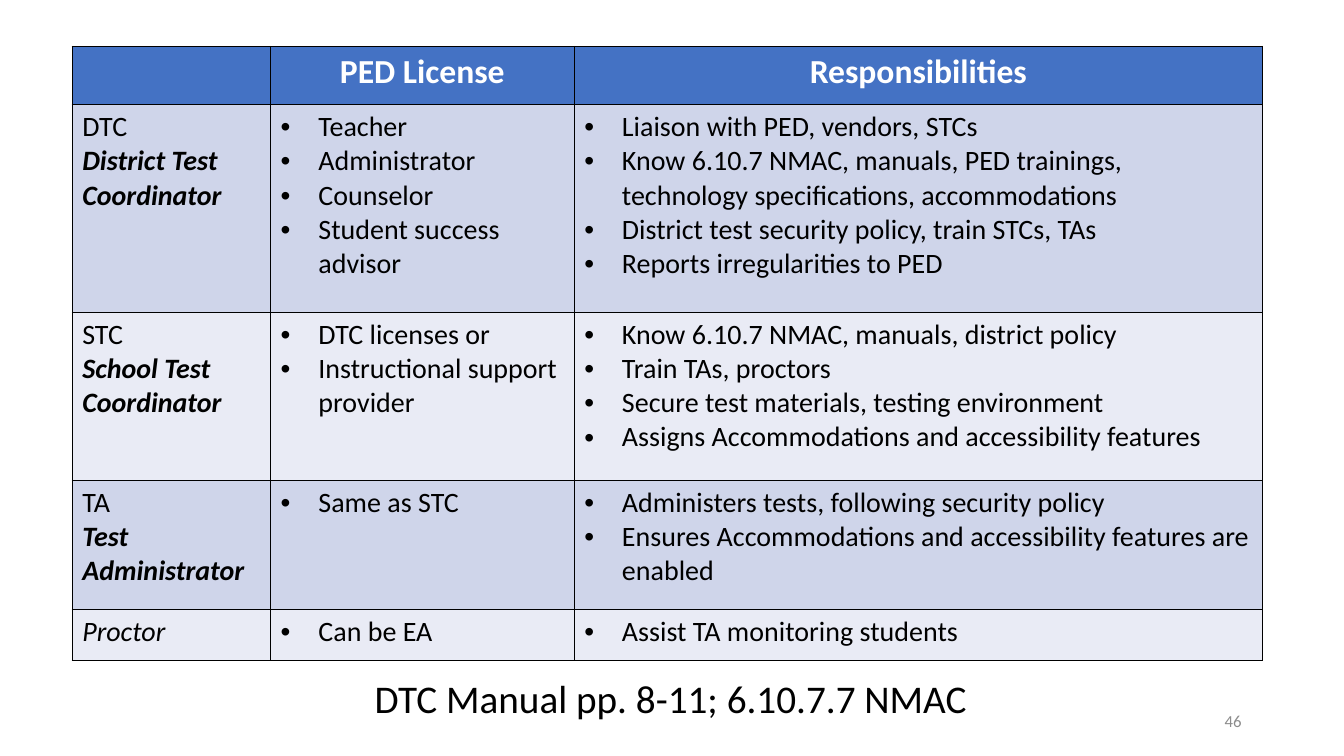
from lxml.etree import SubElement
from pptx import Presentation
from pptx.dml.color import RGBColor
from pptx.enum.text import MSO_ANCHOR as Anchor, PP_ALIGN as Align
from pptx.oxml.ns import qn
from pptx.util import Cm, Pt

# Content: heading row, then (abbreviation, full role, licenses, responsibilities)
HEADINGS = ["", "PED License", "Responsibilities"]
ROLES = [
    ("DTC", "District Test Coordinator",
     ["Teacher", "Administrator", "Counselor", "Student success advisor"],
     ["Liaison with PED, vendors, STCs",
      "Know 6.10.7 NMAC, manuals, PED trainings, technology specifications, accommodations",
      "District test security policy, train STCs, TAs",
      "Reports irregularities to PED"]),
    ("STC", "School Test Coordinator",
     ["DTC licenses or", "Instructional support provider"],
     ["Know 6.10.7 NMAC, manuals, district policy",
      "Train TAs, proctors",
      "Secure test materials, testing environment",
      "Assigns Accommodations and accessibility features"]),
    ("TA", "Test Administrator",
     ["Same as STC"],
     ["Administers tests, following security policy",
      "Ensures Accommodations and accessibility features are enabled"]),
    ("Proctor", "", ["Can be EA"], ["Assist TA monitoring students"]),
]
SOURCE = "DTC Manual pp. 8-11; 6.10.7.7 NMAC"
PAGE_NUMBER = "46"

# Layout and colours
COLUMN_WIDTHS = [5.0, 7.65, 17.35]
ROW_HEIGHTS = [1.47, 5.23, 4.24, 3.25, 1.28]
HEADER_FILL = "4472C4"
BAND_FILLS = ["CFD5EA", "E9EBF5"]
BULLET_INDENT = Cm(0.95)


def color(value):
    return RGBColor.from_string(value)


def write(frame, text, size=20, ink="000000", bold=False, italic=False,
          align=Align.LEFT, bullet=False, indent=0):
    """Add a paragraph, filling the empty first one if there is one."""
    para = frame.paragraphs[0]
    if para.runs:
        para = frame.add_paragraph()
    para.alignment = align
    span = para.add_run()
    span.text = text
    font = span.font
    font.name, font.size, font.bold, font.italic = "Calibri", Pt(size), bold, italic
    font.color.rgb = color(ink)
    settings = para._p.get_or_add_pPr()
    if bullet:
        settings.set("marL", str(BULLET_INDENT))
        settings.set("indent", str(-BULLET_INDENT))
        SubElement(settings, qn("a:buFont"), typeface="Arial")
        SubElement(settings, qn("a:buChar"), char="•")
    elif indent:
        settings.set("marL", str(indent))
        settings.set("indent", "0")
    return para


def style_cell(cell, fill):
    """Draw the four black borders, then the fill that must follow them."""
    properties = cell._tc.get_or_add_tcPr()
    for side in ("lnL", "lnR", "lnT", "lnB"):
        line = SubElement(properties, qn(f"a:{side}"), w=str(Pt(1)))
        solid = SubElement(line, qn("a:solidFill"))
        SubElement(solid, qn("a:srgbClr"), val="000000")
    cell.fill.solid()
    cell.fill.fore_color.rgb = color(fill)


def add_text_box(page, left, top, width, height):
    frame = page.shapes.add_textbox(Cm(left), Cm(top), Cm(width), Cm(height)).text_frame
    frame.word_wrap = True
    return frame


def add_roles_table(page):
    table = page.shapes.add_table(
        len(ROW_HEIGHTS), len(COLUMN_WIDTHS), Cm(1.82), Cm(1.17),
        Cm(sum(COLUMN_WIDTHS)), Cm(sum(ROW_HEIGHTS))).table
    for column, width in zip(table.columns, COLUMN_WIDTHS):
        column.width = Cm(width)
    for row, height in zip(table.rows, ROW_HEIGHTS):
        row.height = Cm(height)

    # Heading row
    for column, heading in enumerate(HEADINGS):
        cell = table.cell(0, column)
        style_cell(cell, HEADER_FILL)
        if heading:
            write(cell.text_frame, heading, size=24, ink="FFFFFF", bold=True,
                  align=Align.CENTER)

    # One banded row per role
    for number, (short, full, *lists) in enumerate(ROLES, start=1):
        for column in range(len(HEADINGS)):
            style_cell(table.cell(number, column), BAND_FILLS[(number - 1) % 2])
        role = table.cell(number, 0).text_frame
        write(role, short, italic=not full)
        if full:
            write(role, full, bold=True, italic=True)
        for column, items in enumerate(lists, start=1):
            for item in items:
                write(table.cell(number, column).text_frame, item, bullet=True)


def main():
    deck = Presentation()
    deck.slide_width, deck.slide_height = Cm(33.87), Cm(19.05)
    page = deck.slides.add_slide(deck.slide_layouts[6])

    # Page number
    number = add_text_box(page, 23.92, 17.65, 7.62, 1.02)
    number.vertical_anchor = Anchor.MIDDLE
    write(number, PAGE_NUMBER, size=12, ink="8C8C8C", align=Align.RIGHT)

    # Source line under the table
    source = write(add_text_box(page, 7.92, 17, 18.11, 1.35), SOURCE, size=28,
                   indent=Cm(1.27))
    source.line_spacing = 0.9
    source.space_before = Pt(5)

    add_roles_table(page)
    deck.save("out.pptx")


if __name__ == "__main__":
    main()
